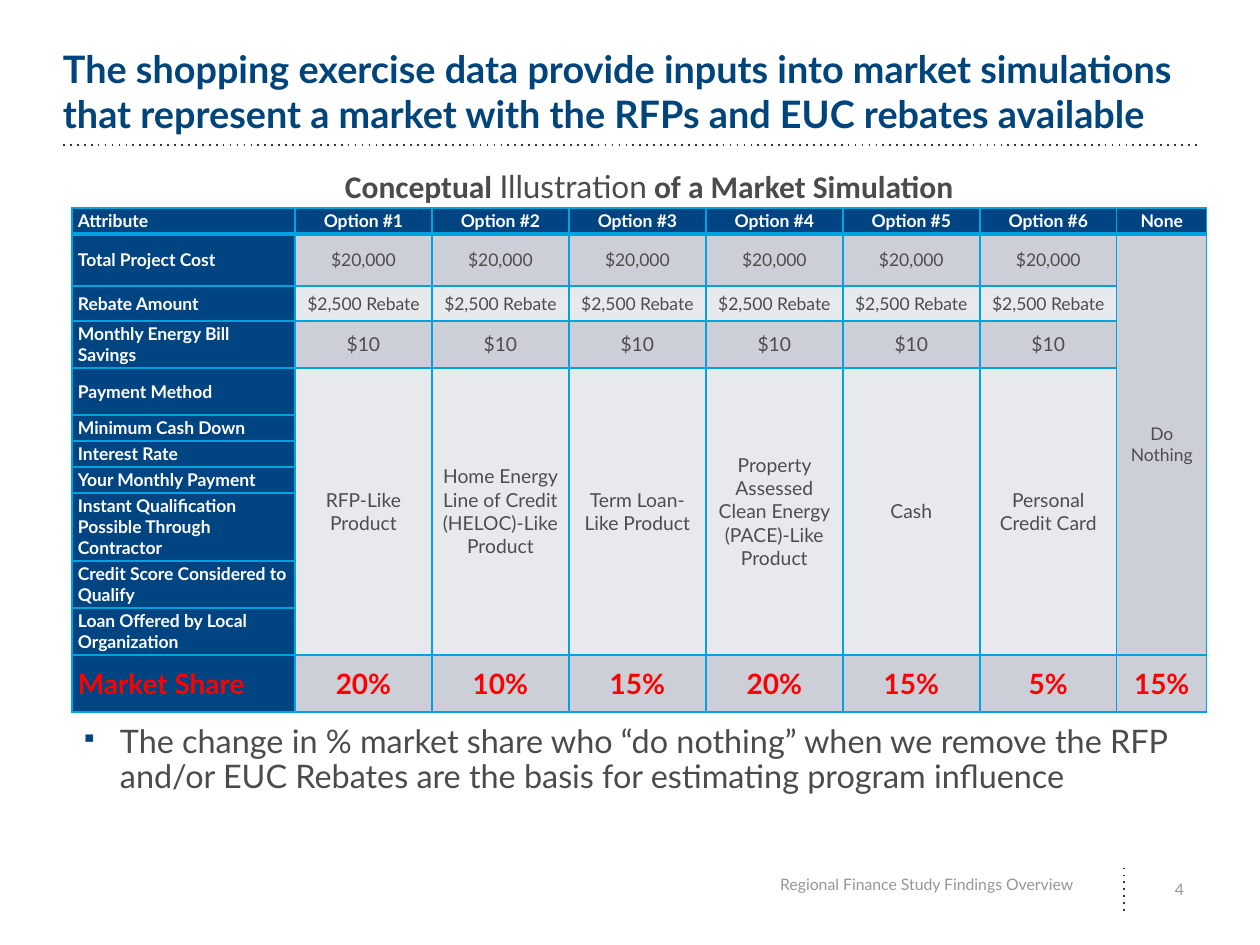
from typing import NamedTuple

from lxml.etree import SubElement
from pptx import Presentation
from pptx.dml.color import RGBColor
from pptx.enum.shapes import MSO_CONNECTOR
from pptx.enum.text import MSO_ANCHOR as Anchor, PP_ALIGN as Align
from pptx.oxml.ns import qn
from pptx.util import Emu, Pt

TITLE_BLUE = RGBColor(0x00, 0x44, 0x7C)
HEADER_BLUE = RGBColor(0x00, 0x44, 0x82)
BORDER_BLUE = RGBColor(0x00, 0xA3, 0xE0)
DARK_BAND = RGBColor(0xCC, 0xCF, 0xD8)
LIGHT_BAND = RGBColor(0xE7, 0xE9, 0xED)
TEXT_GREY = RGBColor(0x4B, 0x4B, 0x4B)
CELL_GREY = RGBColor(0x4D, 0x4D, 0x4F)
FOOTER_GREY = RGBColor(0x96, 0x96, 0x96)
RULE_GREY = RGBColor(0x34, 0x34, 0x34)
WHITE = RGBColor(0xFF, 0xFF, 0xFF)
RED = RGBColor(0xFF, 0x00, 0x00)


def px(length: int) -> Emu:
    return Emu(round(length * 914400 / 126))


class Style(NamedTuple):
    size: float
    color: RGBColor
    bold: bool = False
    font: str = "Lato"


class Span(NamedTuple):
    text: str
    style: Style


class TextBlock(NamedTuple):
    box: tuple[int, int, int, int]
    spans: list[Span]
    align: Align = Align.LEFT
    anchor: Anchor = Anchor.TOP
    insets: tuple[int, int, int, int] = (13, 6, 13, 6)


class Row(NamedTuple):
    label: str
    height: int
    values: list[str]
    fill: RGBColor
    style: Style
    label_style: Style = Style(10, WHITE, True)


class Rule(NamedTuple):
    start: tuple[int, int]
    end: tuple[int, int]


HEADING = Style(18, TEXT_GREY, True, "Calibri")
FOOTER = Style(9, FOOTER_GREY)
HEADER = Style(10, WHITE, True)
SMALL = Style(10, CELL_GREY)
BODY = Style(11, CELL_GREY)
SHARE = Style(16, RED, True)

RULES = [Rule((63, 145), (1197, 145)), Rule((1124, 911), (1124, 864))]

TEXTS = [
    TextBlock((63, 57, 1134, 79),
              [Span("The shopping exercise data provide inputs into market simulations "
                    "that represent a market with the RFPs and EUC rebates available",
                    Style(21.6, TITLE_BLUE, True))],
              anchor=Anchor.BOTTOM, insets=(0, 0, 0, 0)),
    TextBlock((682, 862, 404, 44),
              [Span("Regional Finance Study Findings Overview", FOOTER)],
              Align.RIGHT, Anchor.MIDDLE),
    TextBlock((1140, 867, 57, 45), [Span("4", FOOTER)], Align.RIGHT, Anchor.MIDDLE),
    TextBlock((332, 161, 656, 50),
              [Span("Conceptual ", HEADING),
               Span("Illustration", Style(18, TEXT_GREY)),
               Span(" of a Market Simulation", HEADING)]),
]

TAKEAWAY = TextBlock(
    (81, 726, 1134, 84),
    [Span("The change in % market share who “do nothing” when we remove the RFP "
          "and/or EUC Rebates are the basis for estimating program influence",
          Style(18.5, TEXT_GREY))],
    insets=(0, 0, 13, 0))

COLUMN_WIDTHS = [223] + [137] * 6 + [90]
PRODUCTS = ["RFP-Like Product", "Home Energy Line of Credit (HELOC)-Like Product",
            "Term Loan-Like Product",
            "Property Assessed Clean Energy (PACE)-Like Product",
            "Cash", "Personal Credit Card"]
SHARES = ["20%", "10%", "15%", "20%", "15%", "5%", "15%"]


def label_row(label: str, height: int) -> Row:
    return Row(label, height, [], LIGHT_BAND, BODY)


ROWS = [
    Row("Attribute", 26, [f"Option #{n}" for n in range(1, 7)] + ["None"],
        HEADER_BLUE, HEADER),
    Row("Total Project Cost", 52, ["$20,000"] * 6 + ["Do Nothing"], DARK_BAND, SMALL),
    Row("Rebate Amount", 35, ["$2,500 Rebate"] * 6, LIGHT_BAND, SMALL),
    Row("Monthly Energy Bill Savings", 47, ["$10"] * 6, DARK_BAND, BODY),
    Row("Payment Method", 47, PRODUCTS, LIGHT_BAND, BODY),
    label_row("Minimum Cash Down", 26),
    label_row("Interest Rate", 26),
    label_row("Your Monthly Payment", 26),
    label_row("Instant Qualification Possible Through Contractor", 68),
    label_row("Credit Score Considered to Qualify", 47),
    label_row("Loan Offered by Local Organization", 47),
    Row("Market Share", 57, SHARES, DARK_BAND, SHARE, SHARE),
]
PAYMENT_ROW, LAST_ATTRIBUTE_ROW = 4, 10


def add_span(paragraph, span: Span) -> None:
    run = paragraph.add_run()
    run.text = span.text
    font = run.font
    font.name, font.size, font.bold = span.style.font, Pt(span.style.size), span.style.bold
    font.color.rgb = span.style.color


def add_text(slide, block: TextBlock):
    """Add the block as a text box and return its paragraph."""
    frame = slide.shapes.add_textbox(*map(px, block.box)).text_frame
    frame.word_wrap = True
    frame.vertical_anchor = block.anchor
    (frame.margin_left, frame.margin_top,
     frame.margin_right, frame.margin_bottom) = map(px, block.insets)
    paragraph = frame.paragraphs[0]
    paragraph.alignment = block.align
    for span in block.spans:
        add_span(paragraph, span)
    return paragraph


def add_takeaway(slide) -> None:
    paragraph = add_text(slide, TAKEAWAY)
    paragraph.line_spacing = 0.9
    properties = paragraph._p.get_or_add_pPr()
    properties.set("marL", str(px(39)))
    properties.set("indent", str(px(-39)))
    color = SubElement(properties, qn("a:buClr"))
    SubElement(color, qn("a:srgbClr"), val=str(HEADER_BLUE))
    SubElement(properties, qn("a:buSzPct"), val="70000")
    SubElement(properties, qn("a:buChar"), char="▪")


def add_rule(slide, rule: Rule) -> None:
    line = slide.shapes.add_connector(
        MSO_CONNECTOR.STRAIGHT, *map(px, rule.start + rule.end))
    line.line.color.rgb = RULE_GREY
    line.line.width = Pt(1)
    properties = line._element.spPr
    SubElement(properties.find(qn("a:ln")), qn("a:prstDash"), val="dot")
    SubElement(properties, qn("a:effectLst"))


def set_borders(cell, top: int, bottom: int) -> None:
    properties = cell._tc.get_or_add_tcPr()
    for side, points in (("L", 1), ("R", 1), ("T", top), ("B", bottom)):
        border = SubElement(properties, qn(f"a:ln{side}"), w=str(Pt(points)))
        fill = SubElement(border, qn("a:solidFill"))
        SubElement(fill, qn("a:srgbClr"), val=str(BORDER_BLUE))


def add_simulation_table(slide) -> None:
    table = slide.shapes.add_table(
        len(ROWS), len(COLUMN_WIDTHS), px(72), px(208),
        px(sum(COLUMN_WIDTHS)), px(sum(row.height for row in ROWS))).table
    table.first_row = table.horz_banding = False
    for column, width in zip(table.columns, COLUMN_WIDTHS):
        column.width = px(width)
    none_column = len(COLUMN_WIDTHS) - 1
    for r, row in enumerate(ROWS):
        table.rows[r].height = px(row.height)
        texts = [row.label] + row.values
        for c in range(len(COLUMN_WIDTHS)):
            cell = table.cell(r, c)
            set_borders(cell, 3 if r == 1 else 1, 3 if r == 0 else 1)
            cell.fill.solid()
            cell.fill.fore_color.rgb = HEADER_BLUE if c == 0 else row.fill
            cell.margin_left = cell.margin_right = px(6)
            cell.margin_top = cell.margin_bottom = px(2)
            cell.vertical_anchor = Anchor.TOP if r == 0 else Anchor.MIDDLE
            if c < len(texts):
                paragraph = cell.text_frame.paragraphs[0]
                paragraph.alignment = Align.LEFT if c == 0 else Align.CENTER
                add_span(paragraph, Span(texts[c], row.style if c else row.label_style))
    for c in range(1, none_column):
        table.cell(PAYMENT_ROW, c).merge(table.cell(LAST_ATTRIBUTE_ROW, c))
    table.cell(1, none_column).merge(table.cell(LAST_ATTRIBUTE_ROW, none_column))


def main() -> None:
    deck = Presentation()
    deck.slide_width, deck.slide_height = px(1260), px(945)
    slide = deck.slides.add_slide(deck.slide_layouts[6])
    for rule in RULES:
        add_rule(slide, rule)
    add_simulation_table(slide)
    for block in TEXTS:
        add_text(slide, block)
    add_takeaway(slide)
    deck.save("out.pptx")


if __name__ == "__main__":
    main()
